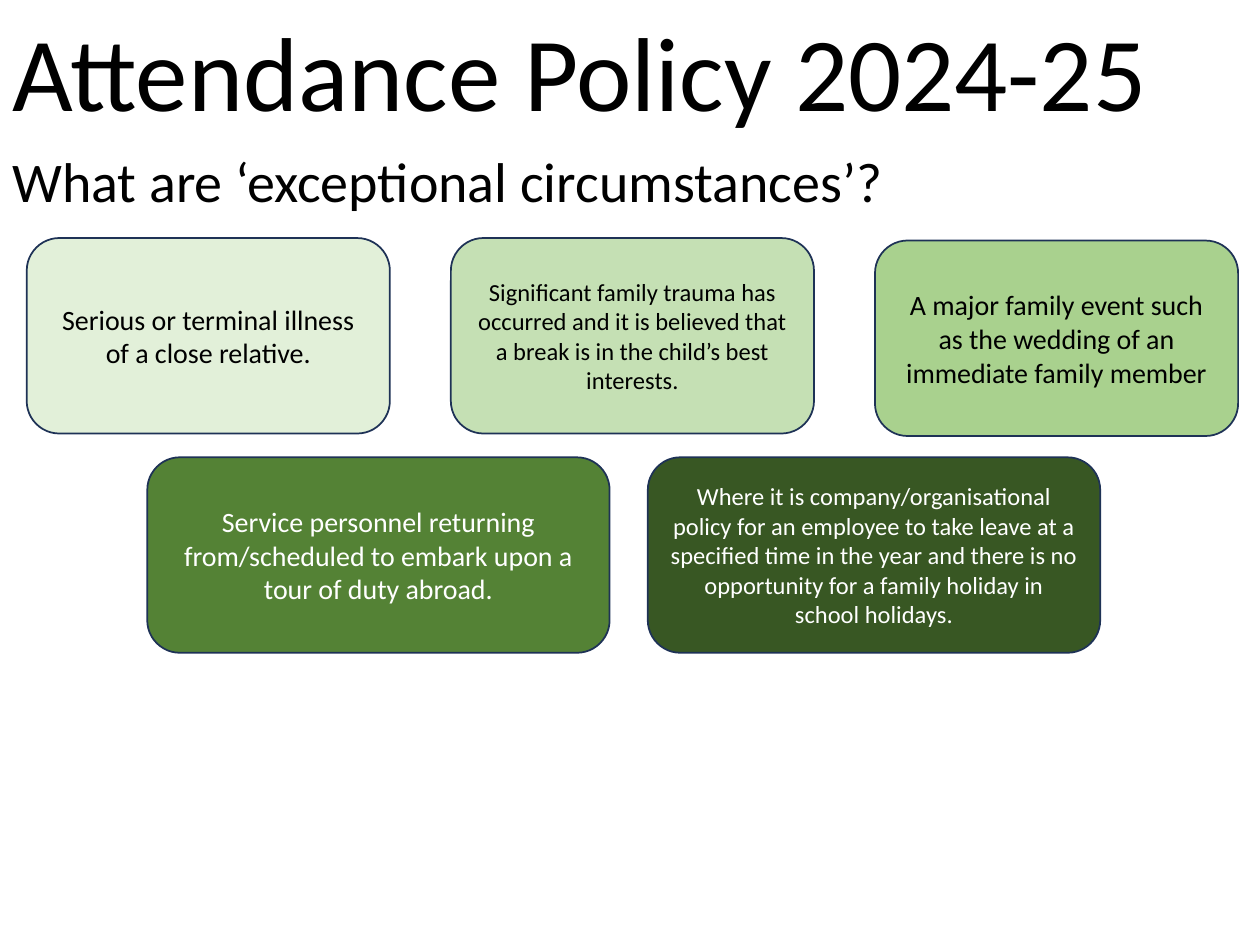
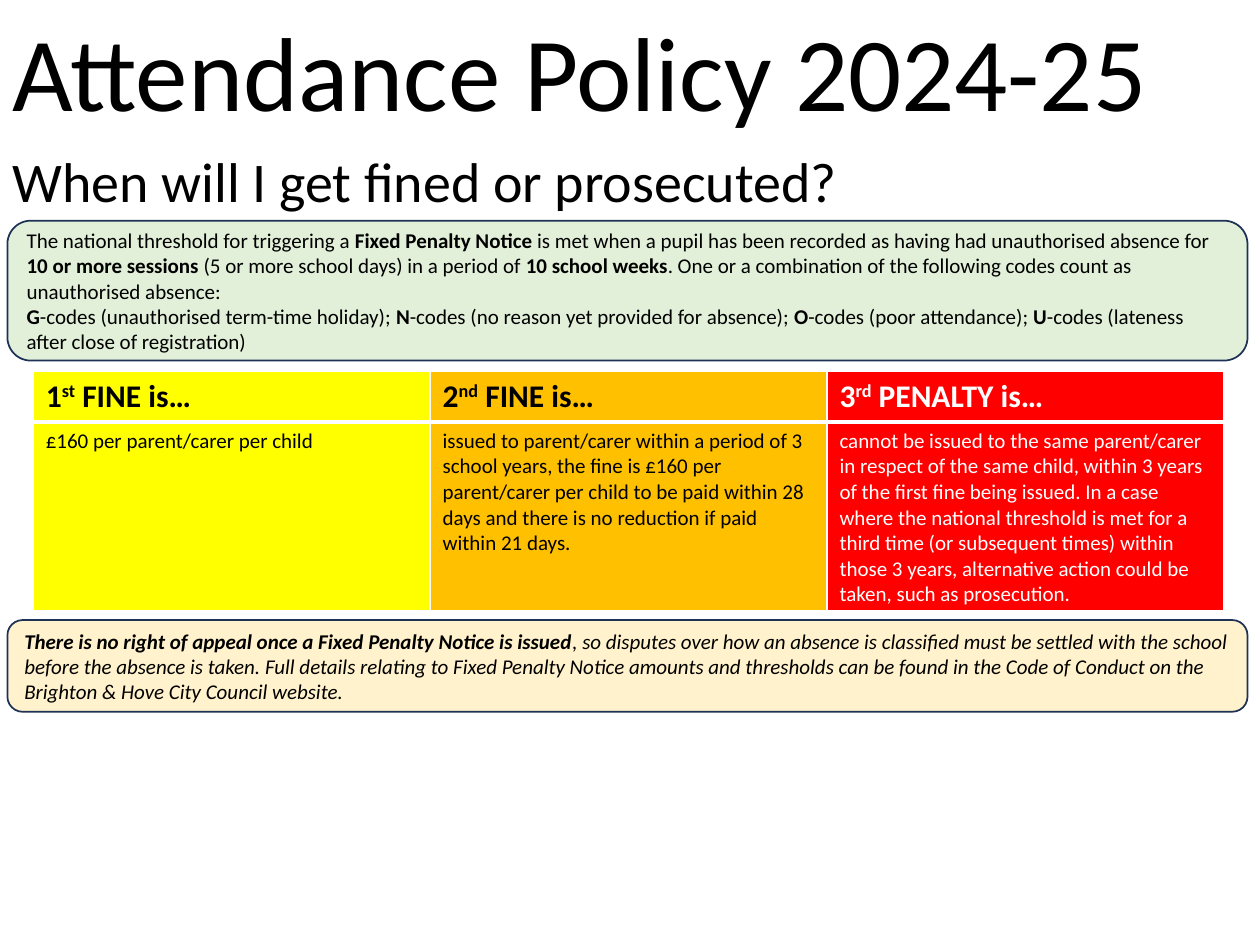
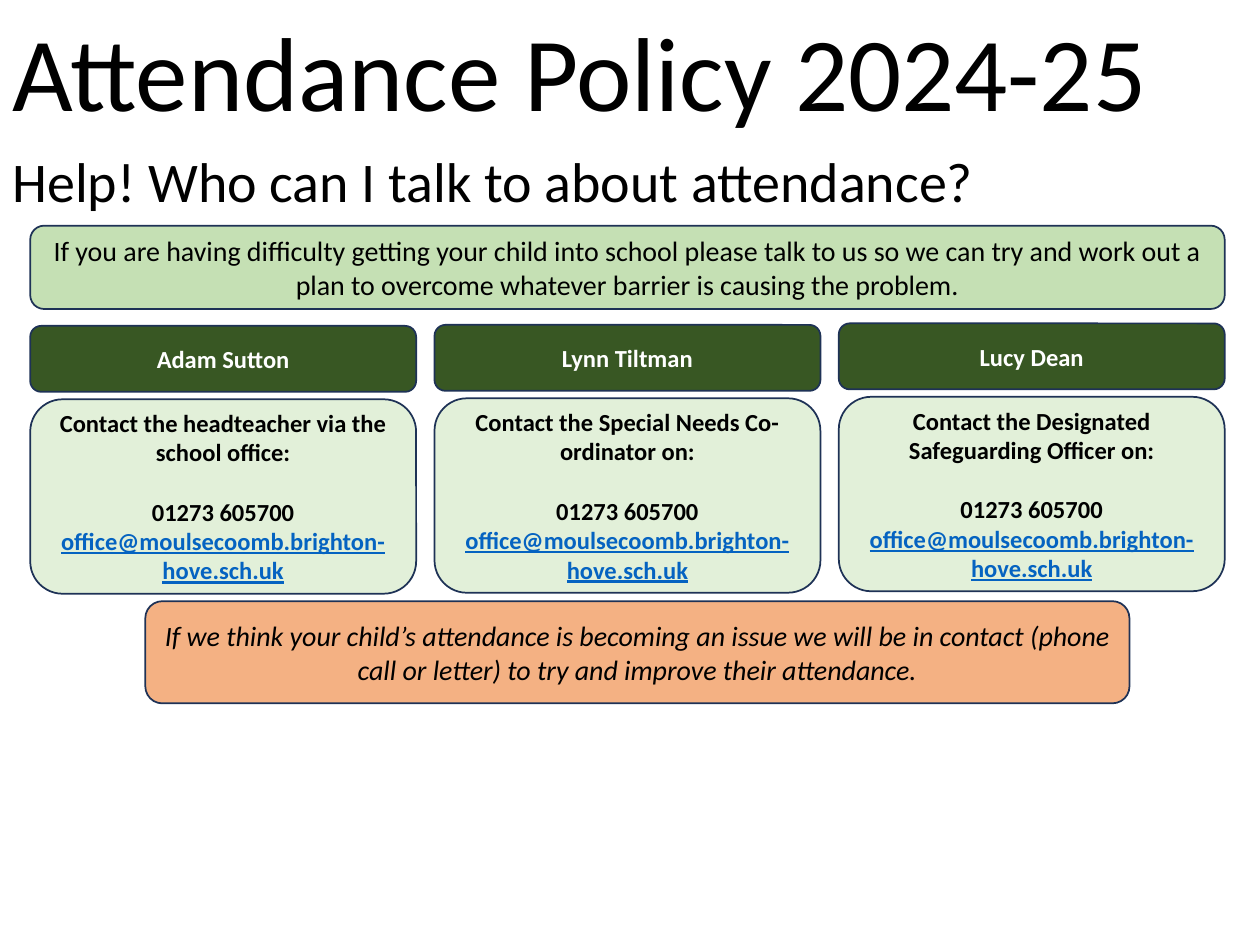
import pptx
import pptx.dml.color
import pptx.enum.shapes
import pptx.enum.text
import pptx.oxml
import pptx.oxml.ns
import pptx.util

Cm = pptx.util.Cm
Pt = pptx.util.Pt
RGBColor = pptx.dml.color.RGBColor
PP_ALIGN = pptx.enum.text.PP_ALIGN

BLACK = RGBColor(0x00, 0x00, 0x00)
WHITE = RGBColor(0xFF, 0xFF, 0xFF)
NAVY = RGBColor(0x1E, 0x32, 0x56)
PALE_GREEN = RGBColor(0xE2, 0xF0, 0xD9)
LIGHT_GREEN = RGBColor(0xC5, 0xE0, 0xB4)
MID_GREEN = RGBColor(0xA9, 0xD1, 0x8E)
GREEN = RGBColor(0x54, 0x82, 0x35)
DARK_GREEN = RGBColor(0x38, 0x57, 0x23)
CREAM = RGBColor(0xFF, 0xF2, 0xCC)
PEACH = RGBColor(0xF4, 0xB1, 0x83)
YELLOW = RGBColor(0xFF, 0xFF, 0x00)
AMBER = RGBColor(0xFF, 0xC0, 0x00)
RED = RGBColor(0xFF, 0x00, 0x00)
LINK_BLUE = RGBColor(0x05, 0x63, 0xC1)

FONT = "Calibri"
TITLE = "Attendance Policy 2024-25"
PHONE = "01273 605700"
EMAIL = "office@moulsecoomb.brighton-hove.sch.uk"


def add_text(paragraph, text, size=16, color=BLACK, bold=False, italic=False,
             underline=False, baseline=0):
    for index, part in enumerate(text.split("**")):
        if not part:
            continue
        run = paragraph.add_run()
        run.text = part
        font = run.font
        font.name = FONT
        font.size = Pt(size)
        font.color.rgb = color
        font.bold = bold or index % 2 == 1
        font.italic = italic
        font.underline = underline
        if baseline:
            run._r.get_or_add_rPr().set("baseline", str(baseline * 1000))


class Deck:
    def __init__(self):
        self.presentation = pptx.Presentation()
        self.presentation.slide_width = Cm(25.4)
        self.presentation.slide_height = Cm(19.05)
        self.slide = None

    def add_slide(self, question, question_width):
        layout = self.presentation.slide_layouts[6]
        self.slide = self.presentation.slides.add_slide(layout)
        self.add_heading(TITLE, 0, 23.65, 2.82, 60)
        self.add_heading(question, 2.82, question_width, 1.63, 32)

    def add_heading(self, text, top, width, height, size):
        shape = self.slide.shapes.add_textbox(Cm(0), Cm(top), Cm(width), Cm(height))
        frame = shape.text_frame
        frame.word_wrap = False
        frame.auto_size = pptx.enum.text.MSO_AUTO_SIZE.SHAPE_TO_FIT_TEXT
        add_text(frame.paragraphs[0], text, size=size)

    def add_card(self, left, top, width, height, fill, *texts,
                 align=PP_ALIGN.CENTER, **text_format):
        shape = self.slide.shapes.add_shape(
            pptx.enum.shapes.MSO_SHAPE.ROUNDED_RECTANGLE,
            Cm(left), Cm(top), Cm(width), Cm(height))
        shape.shadow.inherit = False
        shape.fill.solid()
        shape.fill.fore_color.rgb = fill
        shape.line.color.rgb = NAVY
        shape.line.width = Pt(1)
        frame = shape.text_frame
        frame.word_wrap = True
        frame.vertical_anchor = pptx.enum.text.MSO_ANCHOR.MIDDLE
        for index, text in enumerate(texts):
            paragraph = frame.add_paragraph() if index else frame.paragraphs[0]
            paragraph.alignment = align
            add_text(paragraph, text, **text_format)
        return frame

    def add_table(self, left, top, column_width, row_heights, column_count):
        shape = self.slide.shapes.add_table(
            len(row_heights), column_count, Cm(left), Cm(top),
            Cm(column_width * column_count), Cm(sum(row_heights)))
        table = shape.table
        table.horz_banding = False
        for column in table.columns:
            column.width = Cm(column_width)
        for row, height in zip(table.rows, row_heights):
            row.height = Cm(height)
        return table

    def style_cell(self, cell, fill, **border_widths):
        properties = cell._tc.get_or_add_tcPr()
        for side in "LRTB":
            width = Pt(border_widths.get(side, 1))
            properties.append(pptx.oxml.parse_xml(
                f'<a:ln{side} {pptx.oxml.ns.nsdecls("a")} w="{width}">'
                f'<a:solidFill><a:srgbClr val="{WHITE}"/></a:solidFill></a:ln{side}>'))
        cell.fill.solid()
        cell.fill.fore_color.rgb = fill


def add_circumstances_slide(deck):
    deck.add_slide("What are ‘exceptional circumstances’?", 18.21)
    upper_cards = [
        ("Serious or terminal illness of a close relative.", 4.8, PALE_GREEN, 16),
        ("Significant family trauma has occurred and it is believed that a break "
         "is in the child’s best interests.", 4.8, LIGHT_GREEN, 14),
        ("A major family event such as the wedding of an immediate family member",
         4.85, MID_GREEN, 16),
    ]
    for index, (text, top, fill, size) in enumerate(upper_cards):
        deck.add_card(0.54 + 8.55 * index, top, 7.32, 3.94, fill, text, size=size)
    lower_cards = [
        ("Service personnel returning from/scheduled to embark upon a tour of duty "
         "abroad.", 2.97, 9.32, GREEN, 16),
        ("Where it is company/organisational policy for an employee to take leave "
         "at a specified time in the year and there is no opportunity for a family "
         "holiday in school holidays.", 13.06, 9.12, DARK_GREEN, 14),
    ]
    for text, left, width, fill, size in lower_cards:
        deck.add_card(left, 9.22, width, 3.94, fill, text, size=size, color=WHITE)


def add_fines_slide(deck):
    deck.add_slide("When will I get fined or prosecuted?", 17.32)
    fines = [
        ("1", "st", " FINE is…", "£160 per parent/carer per child", YELLOW, BLACK),
        ("2", "nd", " FINE is…",
         "issued to parent/carer within a period of 3 school years, the fine is £160 "
         "per parent/carer per child to be paid within 28 days and there is no "
         "reduction if paid within 21 days.", AMBER, BLACK),
        ("3", "rd", " PENALTY is…",
         "cannot be issued to the same parent/carer in respect of the same child, "
         "within 3 years of the first fine being issued. In a case where the national "
         "threshold is met for a third time (or subsequent times) within those 3 "
         "years, alternative action could be taken, such as prosecution.", RED, WHITE),
    ]
    table = deck.add_table(0.67, 7.48, 8, [1.03, 3.8], len(fines))
    for column, (number, ordinal, label, detail, fill, color) in enumerate(fines):
        header = table.cell(0, column)
        deck.style_cell(header, fill, B=3)
        for text, baseline in ((number, 0), (ordinal, 30), (label, 0)):
            add_text(header.text_frame.paragraphs[0], text, size=18, color=color,
                     bold=True, baseline=baseline)
        body = table.cell(1, column)
        deck.style_cell(body, fill, T=3)
        add_text(body.text_frame.paragraphs[0], detail, size=12, color=color)
    deck.add_card(
        0.15, 4.45, 25, 2.82, PALE_GREEN,
        "The national threshold for triggering a **Fixed Penalty Notice** is met when "
        "a pupil has been recorded as having had unauthorised absence for **10 or more "
        "sessions** (5 or more school days) in a period of **10 school weeks**. One or "
        "a combination of the following codes count as unauthorised absence:",
        "**G**-codes (unauthorised term-time holiday); **N**-codes (no reason yet "
        "provided for absence); **O**-codes (poor attendance); **U**-codes (lateness "
        "after close of registration)",
        align=PP_ALIGN.LEFT, size=12)
    deck.add_card(
        0.15, 12.5, 25, 1.85, CREAM,
        "**There is no right of appeal once a Fixed Penalty Notice is issued**, so "
        "disputes over how an absence is classified must be settled with the school "
        "before the absence is taken. Full details relating to Fixed Penalty Notice "
        "amounts and thresholds can be found in the Code of Conduct on the Brighton & "
        "Hove City Council website.",
        align=PP_ALIGN.LEFT, size=12, italic=True)


def add_contacts_slide(deck):
    deck.add_slide("Help! Who can I talk to about attendance?", 20.14)
    deck.add_card(
        0.61, 4.55, 24.08, 1.68, LIGHT_GREEN,
        "If you are having difficulty getting your child into school please talk to us "
        "so we can try and work out a plan to overcome whatever barrier is causing the "
        "problem.")
    contacts = [
        ("Adam Sutton", "Contact the headteacher via the school office:", 6.57),
        ("Lynn Tiltman", "Contact the Special Needs Co-ordinator on:", 6.55),
        ("Lucy Dean", "Contact the Designated Safeguarding Officer on:", 6.52),
    ]
    for index, (name, instruction, top) in enumerate(contacts):
        left = 0.61 + 8.15 * index
        deck.add_card(left, top, 7.78, 1.33, DARK_GREEN, name,
                      size=14, color=WHITE, bold=True)
        frame = deck.add_card(left, top + 1.48, 7.78, 3.92, PALE_GREEN,
                              instruction, PHONE, size=14, bold=True)
        frame.paragraphs[1].space_before = Pt(17)
        email = frame.add_paragraph()
        email.alignment = PP_ALIGN.CENTER
        add_text(email, EMAIL, size=14, color=LINK_BLUE, bold=True, underline=True)
    deck.add_card(
        2.93, 12.12, 19.84, 2.06, PEACH,
        "If we think your child’s attendance is becoming an issue we will be in contact "
        "(phone call or letter) to try and improve their attendance.", italic=True)


def main():
    deck = Deck()
    add_circumstances_slide(deck)
    add_fines_slide(deck)
    add_contacts_slide(deck)
    deck.presentation.save("out.pptx")


if __name__ == "__main__":
    main()
